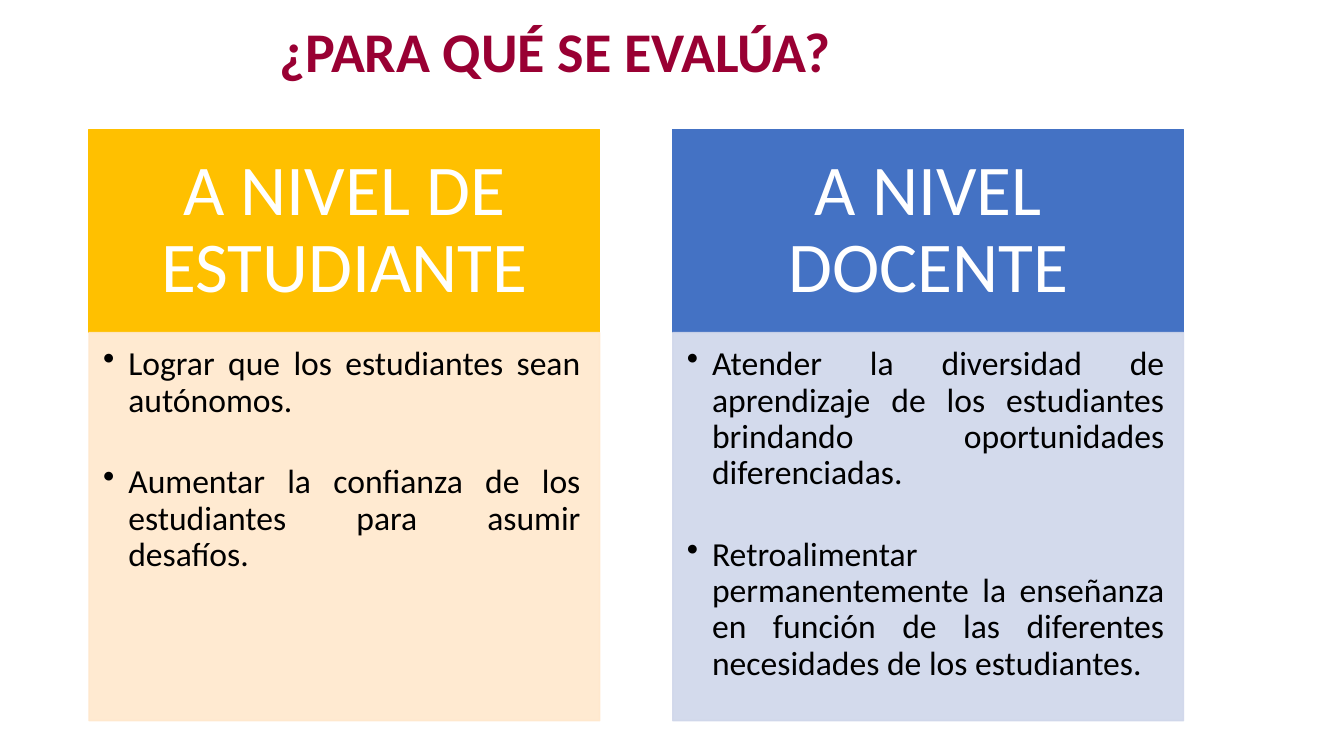
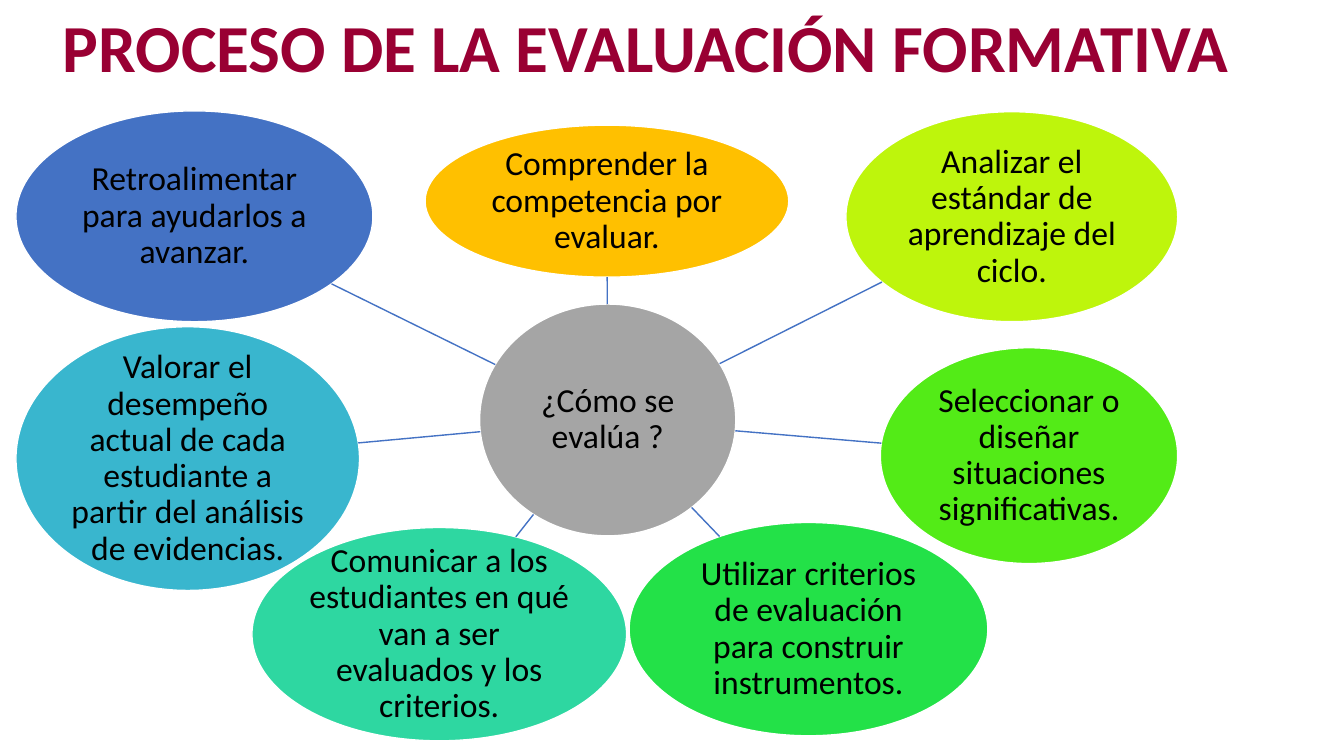
"""Builds two slides on formative assessment: its purposes and its process."""
from dataclasses import dataclass
from math import hypot

from pptx import Presentation
from pptx.dml.color import RGBColor as Color
from pptx.enum.shapes import MSO_CONNECTOR as Connector, MSO_SHAPE as Preset
from pptx.enum.text import MSO_ANCHOR as Anchor, PP_ALIGN as Align
from pptx.oxml.ns import qn
from pptx.oxml.xmlchemy import OxmlElement
from pptx.util import Inches, Pt

COLUMNS, ROWS = 160, 90


@dataclass(frozen=True)
class Theme:
    font: str = "Calibri"
    title: str = "990033"
    text: str = "000000"
    light: str = "FFFFFF"
    accent: str = "4472C4"
    gold: str = "FFC000"
    hub: str = "A5A5A5"
    pale_gold: str = "FFE8CC"
    pale_blue: str = "CFD6EA"
    title_size: float = 40
    wide_title_size: float = 48
    heading_size: float = 51
    body_size: float = 24
    line_width: float = 1
    line_spacing: float = 0.9
    item_gap: float = 32.5
    panel_opacity: int = 90


class Deck:
    def __init__(self, theme):
        self.theme = theme
        self.presentation = Presentation()
        self.presentation.slide_width = Inches(13.33)
        self.presentation.slide_height = Inches(7.5)
        self.column = self.presentation.slide_width / COLUMNS
        self.row = self.presentation.slide_height / ROWS
        self.slide = None

    def new_slide(self):
        layout = self.presentation.slide_layouts[6]
        self.slide = self.presentation.slides.add_slide(layout)

    def place(self, left, top, width, height):
        return (round(left * self.column), round(top * self.row),
                round(width * self.column), round(height * self.row))

    def fill_text(self, frame, texts, size, color, bold=False, align=Align.CENTER,
                  anchor=Anchor.MIDDLE, insets=(0.1, 0.05, 0.1, 0.05),
                  spacing=None, bullets=False):
        sides = ("margin_left", "margin_top", "margin_right", "margin_bottom")
        frame_format = dict(zip(sides, map(Inches, insets)),
                            word_wrap=True, vertical_anchor=anchor)
        for name, value in frame_format.items():
            setattr(frame, name, value)
        font_format = {"name": self.theme.font, "size": Pt(size), "bold": bold}
        for index, text in enumerate(texts):
            paragraph = frame.add_paragraph() if index else frame.paragraphs[0]
            paragraph.text = text
            paragraph.alignment = align
            paragraph.line_spacing = spacing
            if index:
                paragraph.space_before = Pt(self.theme.item_gap)
            if bullets:
                self.add_bullet(paragraph)
            font = paragraph.runs[0].font
            for name, value in font_format.items():
                setattr(font, name, value)
            font.color.rgb = Color.from_string(color)

    def add_bullet(self, paragraph):
        properties = paragraph._p.get_or_add_pPr()
        properties.set("marL", str(Inches(0.25)))
        properties.set("indent", str(Inches(-0.25)))
        bullet = OxmlElement("a:buChar")
        bullet.set("char", "•")
        properties.append(bullet)

    def title(self, text, place, size):
        box = self.slide.shapes.add_textbox(*self.place(*place))
        self.fill_text(box.text_frame, [text], size, self.theme.title, bold=True,
                       anchor=Anchor.TOP)

    def shape(self, preset, place, fill, line, opacity=100):
        shape = self.slide.shapes.add_shape(preset, *self.place(*place))
        shape.shadow.inherit = False
        shape.fill.solid()
        shape.fill.fore_color.rgb = Color.from_string(fill)
        shape.line.color.rgb = Color.from_string(line)
        shape.line.width = Pt(self.theme.line_width)
        if opacity < 100:
            for color in shape._element.spPr.iter(qn("a:srgbClr")):
                alpha = OxmlElement("a:alpha")
                alpha.set("val", str(opacity * 1000))
                color.append(alpha)
        return shape

    def panel(self, left, heading, items, fill, pale):
        theme = self.theme
        top, width, head, body = 15.4, 60.8, 24.2, 46.2
        header = self.shape(Preset.RECTANGLE, (left, top, width, head), fill, fill)
        self.fill_text(header.text_frame, [heading], theme.heading_size, theme.light,
                       insets=(0.4, 0.23, 0.4, 0.23), spacing=theme.line_spacing)
        content = self.shape(Preset.RECTANGLE, (left, top + head, width, body),
                             pale, pale, theme.panel_opacity)
        self.fill_text(content.text_frame, items, theme.body_size, theme.text,
                       align=Align.JUSTIFY, anchor=Anchor.TOP, bullets=True,
                       insets=(0.14, 0.14, 0.19, 0.21), spacing=theme.line_spacing)

    def bubble(self, text, place, fill):
        bubble = self.shape(Preset.OVAL, place, fill, self.theme.light)
        self.fill_text(bubble.text_frame, [text], self.theme.body_size,
                       self.theme.text, insets=(0.02,) * 4,
                       spacing=self.theme.line_spacing)
        return bubble

    def spoke(self, hub, bubble):
        start, end = rim_point(hub, bubble), rim_point(bubble, hub)
        line = self.slide.shapes.add_connector(Connector.STRAIGHT, *start, *end)
        line.line.color.rgb = Color.from_string(self.theme.accent)
        line.line.width = Pt(self.theme.line_width)
        line._element.spPr.append(OxmlElement("a:effectLst"))


def center(shape):
    return shape.left + shape.width / 2, shape.top + shape.height / 2


def rim_point(oval, target):
    (x, y), (target_x, target_y) = center(oval), center(target)
    across, down = target_x - x, target_y - y
    reach = hypot(2 * across / oval.width, 2 * down / oval.height)
    return round(x + across / reach), round(y + down / reach)


def build_purposes(deck):
    theme = deck.theme
    panels = [
        ("A NIVEL DE ESTUDIANTE",
         ["Lograr que los estudiantes sean autónomos.",
          "Aumentar la confianza de los estudiantes para asumir desafíos."],
         theme.gold, theme.pale_gold),
        ("A NIVEL DOCENTE",
         ["Atender la diversidad de aprendizaje de los estudiantes "
          "brindando oportunidades diferenciadas.",
          "Retroalimentar permanentemente la enseñanza en función de las "
          "diferentes necesidades de los estudiantes."],
         theme.accent, theme.pale_blue),
    ]
    deck.new_slide()
    deck.title("¿PARA QUÉ SE EVALÚA?", (1.3, 1.4, 129.5, 9.2), theme.title_size)
    for index, panel in enumerate(panels):
        deck.panel(10.6 + 69.5 * index, *panel)


def build_process(deck):
    theme = deck.theme
    steps = [
        ("Comprender la competencia por evaluar.",
         (50.6, 14.9, 43.3, 18.1), theme.gold),
        ("Analizar el estándar de aprendizaje del ciclo.",
         (100.7, 13.3, 39.5, 25), "BEF50C"),
        ("Seleccionar o diseñar situaciones significativas.",
         (104.8, 41.4, 35.4, 25.7), "53EB17"),
        ("Utilizar criterios de evaluación para construir instrumentos.",
         (74.9, 62.2, 42.7, 25.4), "23E148"),
        ("Comunicar a los estudiantes en qué van a ser evaluados y los criterios.",
         (30, 62.8, 44.6, 25.4), "2ED7A1"),
        ("Valorar el desempeño actual de cada estudiante a partir del "
         "análisis de evidencias.",
         (1.9, 38.9, 40.9, 31.4), "39B6CE"),
        ("Retroalimentar para ayudarlos a avanzar.",
         (1.9, 13.2, 42.5, 25.1), theme.accent),
    ]
    deck.new_slide()
    deck.title("PROCESO DE LA EVALUACIÓN FORMATIVA", (1.9, 0, 150, 10.9),
               theme.wide_title_size)
    hub = deck.bubble("¿Cómo se evalúa ?", (57.1, 36.2, 30.5, 27.6), theme.hub)
    for step in steps:
        deck.spoke(hub, deck.bubble(*step))


def main():
    deck = Deck(Theme())
    build_purposes(deck)
    build_process(deck)
    deck.presentation.save("out.pptx")


if __name__ == "__main__":
    main()
